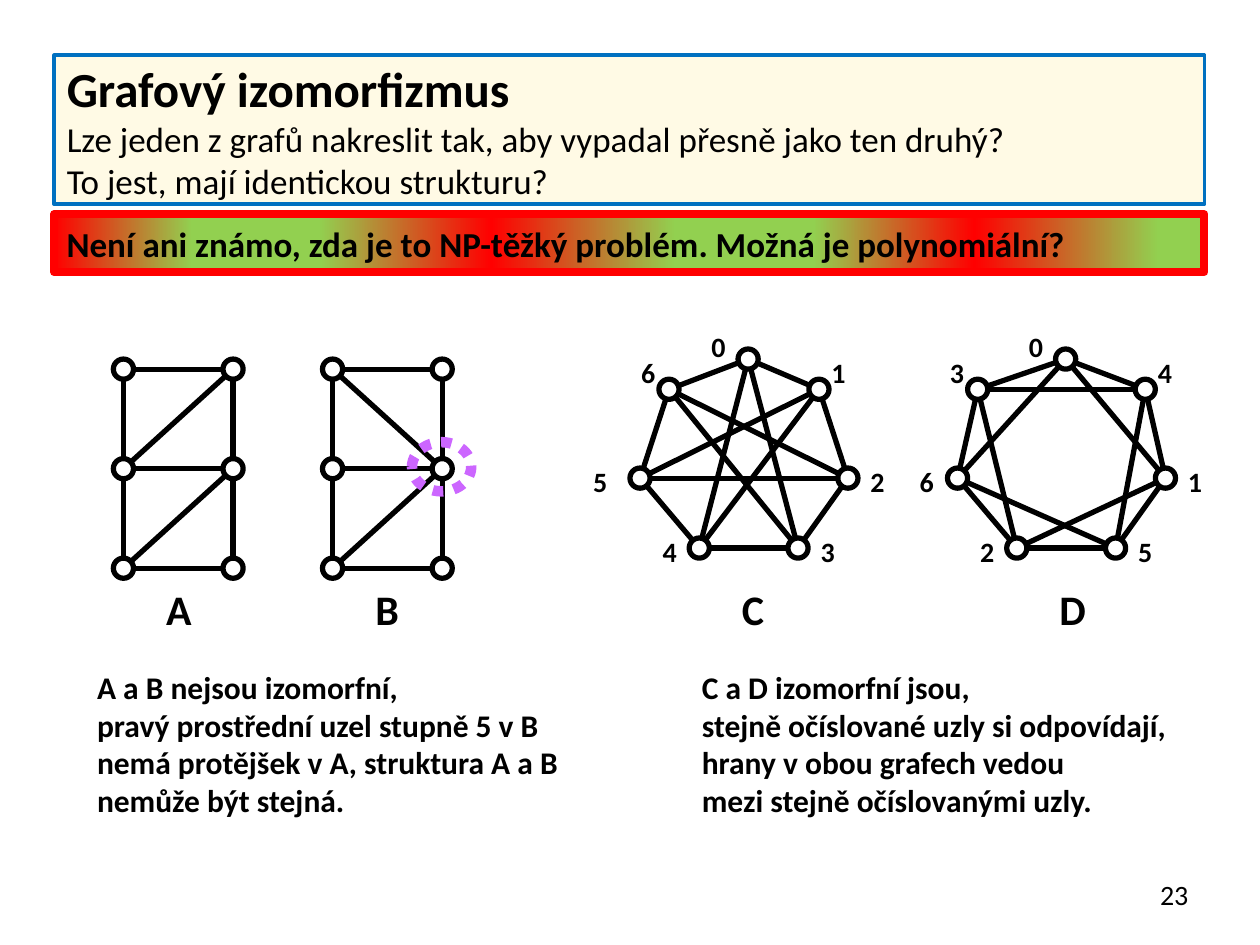
from dataclasses import dataclass

from lxml.etree import SubElement
from pptx import Presentation
from pptx.dml.color import RGBColor
from pptx.enum.dml import MSO_LINE
from pptx.enum.shapes import MSO_CONNECTOR, MSO_SHAPE
from pptx.enum.text import MSO_ANCHOR, MSO_AUTO_SIZE, PP_ALIGN
from pptx.oxml.ns import qn
from pptx.util import Inches, Pt


@dataclass(frozen=True)
class Theme:
    font: str = "Calibri"
    ink: str = "000000"
    paper: str = "FFFFFF"
    cream: str = "FFFAE5"
    blue: str = "0070C0"
    red: str = "FF0000"
    green: str = "92D050"
    violet: str = "CC66FF"
    title_size: int = 28
    caption_size: int = 24
    subtitle_size: int = 20
    note_size: int = 18
    label_size: int = 16


@dataclass(frozen=True)
class Box:
    left: float
    top: float
    width: float
    height: float

    def emu(self):
        return [Inches(v) for v in (self.left, self.top, self.width, self.height)]


THEME = Theme()
NODE_SIZE = 0.16
EDGE_WIDTH = 3


def color(code):
    return RGBColor.from_string(code)


def move(placeholder, box):
    placeholder.left, placeholder.top, placeholder.width, placeholder.height = box.emu()


def outline(shape, code, width):
    shape.line.color.rgb = color(code)
    shape.line.width = Pt(width)


def format_paragraph(paragraph, size, bold=True, align=PP_ALIGN.LEFT):
    paragraph.alignment = align
    paragraph.space_before = Pt(0)
    for run in paragraph.runs:
        run.font.name = THEME.font
        run.font.size = Pt(size)
        run.font.bold = bold
        run.font.color.rgb = color(THEME.ink)


def add_text(slide, box, text, size, wrap=True, bold=True, align=PP_ALIGN.LEFT):
    frame = slide.shapes.add_textbox(*box.emu()).text_frame
    frame.word_wrap = wrap
    frame.text = text
    format_paragraph(frame.paragraphs[0], size, bold, align)
    return frame


def add_header(slide, box):
    title = slide.shapes.title
    move(title, box)
    title.fill.solid()
    title.fill.fore_color.rgb = color(THEME.cream)
    outline(title, THEME.blue, 2.25)
    frame = title.text_frame
    frame.auto_size = MSO_AUTO_SIZE.NONE
    frame.vertical_anchor = MSO_ANCHOR.MIDDLE
    frame.text = ("Grafový izomorfizmus\n"
                  "Lze jeden z grafů nakreslit tak, aby vypadal přesně jako ten druhý?\n"
                  "To jest, mají identickou strukturu?")
    heading, *questions = frame.paragraphs
    format_paragraph(heading, THEME.title_size)
    for question in questions:
        format_paragraph(question, THEME.subtitle_size, bold=False)


def add_banner(slide, box):
    banner = slide.shapes.add_shape(MSO_SHAPE.RECTANGLE, *box.emu())
    banner.shadow.inherit = False
    banner.fill.gradient()
    banner.fill.gradient_angle = 0
    stops = banner.fill._fill._gradFill.find(qn("a:gsLst"))
    stops[:] = []
    red, green = THEME.red, THEME.green
    for percent, code in zip((0, 12, 23, 38, 54, 66, 80, 96),
                             (red, green, green, red, green, green, red, green)):
        stop = SubElement(stops, qn("a:gs"), pos=str(percent * 1000))
        SubElement(stop, qn("a:srgbClr"), val=code)
    outline(banner, red, 4.5)
    frame = banner.text_frame
    frame.vertical_anchor = MSO_ANCHOR.MIDDLE
    frame.text = "Není ani známo, zda je to NP-těžký problém. Možná je polynomiální?"
    format_paragraph(frame.paragraphs[0], THEME.subtitle_size)


def add_graph(slide, nodes, edges):
    for start, end in edges:
        ends = [Inches(v) for v in (*nodes[start], *nodes[end])]
        edge = slide.shapes.add_connector(MSO_CONNECTOR.STRAIGHT, *ends)
        outline(edge, THEME.ink, EDGE_WIDTH)
        SubElement(edge._element.spPr, qn("a:effectLst"))
    for x, y in nodes.values():
        spot = Box(x - NODE_SIZE / 2, y - NODE_SIZE / 2, NODE_SIZE, NODE_SIZE)
        node = slide.shapes.add_shape(MSO_SHAPE.OVAL, *spot.emu())
        node.shadow.inherit = False
        node.fill.solid()
        node.fill.fore_color.rgb = color(THEME.paper)
        outline(node, THEME.ink, EDGE_WIDTH)


def add_caption(slide, box, name, offset):
    spot = Box(box.left + offset, 4.58, 0.41, 0.5)
    add_text(slide, spot, name, THEME.caption_size, wrap=False)


def add_ladder(slide, box, name, diagonals):
    nodes = {(row, col): (box.left + col * box.width, box.top + row * box.height / 2)
             for row in range(3) for col in range(2)}
    rungs = [((row, 0), (row, 1)) for row in range(3)]
    rails = [((0, col), (2, col)) for col in range(2)]
    add_graph(slide, nodes, rungs + rails + diagonals)
    add_caption(slide, box, name, 0.24)


def add_heptagon(slide, box, name, labels, chord_step, shoulder, west_gap):
    shares = [(0.52, 0), (1 - shoulder / box.width, 0.16), (1, 0.63), (0.76, 1),
              (0.285, 1), (0, 0.63), (shoulder / box.width, 0.16)]
    nodes = {i: (box.left + x * box.width, box.top + y * box.height)
             for i, (x, y) in enumerate(shares)}
    edges = [(i, (i + step) % 7) for step in (1, chord_step) for i in range(7)]
    add_graph(slide, nodes, edges)
    add_caption(slide, box, name, 0.71)
    offsets = [(-0.39, -0.28), (0, -0.32), (0.08, -0.16), (0.08, -0.16),
               (-0.39, -0.16), (-west_gap, -0.16), (-0.32, -0.32)]
    for label, (x, y), (dx, dy) in zip(labels, nodes.values(), offsets):
        add_text(slide, Box(x + dx, y + dy, 0.31, 0.37), label, THEME.label_size)


def add_highlight(slide, box):
    ring = slide.shapes.add_shape(MSO_SHAPE.OVAL, *box.emu())
    ring.shadow.inherit = False
    ring.fill.background()
    outline(ring, THEME.violet, 6)
    ring.line.dash_style = MSO_LINE.ROUND_DOT


def add_explanation(placeholder, box, text):
    move(placeholder, box)
    frame = placeholder.text_frame
    frame.auto_size = MSO_AUTO_SIZE.NONE
    frame.word_wrap = False
    frame.text = text
    for paragraph in frame.paragraphs:
        properties = paragraph._p.get_or_add_pPr()
        properties.set("marL", "0")
        properties.set("indent", "0")
        SubElement(properties, qn("a:buNone"))
        format_paragraph(paragraph, THEME.note_size)


def add_page_number(slide, box):
    frame = add_text(slide, box, "23", THEME.label_size, bold=False, align=PP_ALIGN.RIGHT)
    frame.vertical_anchor = MSO_ANCHOR.MIDDLE


def main():
    deck = Presentation()
    deck.slide_width, deck.slide_height = Inches(10), Inches(7.5)
    slide = deck.slides.add_slide(deck.slide_layouts[3])
    add_header(slide, Box(0.43, 0.44, 9.13, 1.18))
    add_banner(slide, Box(0.43, 1.7, 9.13, 0.46))
    lower_diagonal = ((2, 0), (1, 1))
    add_ladder(slide, Box(0.98, 2.93, 0.87, 1.58), "A", [((1, 0), (0, 1)), lower_diagonal])
    add_ladder(slide, Box(2.64, 2.93, 0.87, 1.58), "B", [((0, 0), (1, 1)), lower_diagonal])
    add_highlight(slide, Box(3.27, 3.51, 0.47, 0.39))
    add_heptagon(slide, Box(5.08, 2.85, 1.65, 1.5), "C", "0123456", 3, 0.23, 0.47)
    add_heptagon(slide, Box(7.6, 2.85, 1.65, 1.5), "D", "0415263", 2, 0.16, 0.4)
    add_explanation(slide.placeholders[1], Box(0.67, 5.25, 3.95, 1.31),
                    "A a B nejsou izomorfní,\npravý prostřední uzel stupně 5 v B\n"
                    "nemá protějšek v A, struktura A a B\nnemůže být stejná.")
    add_explanation(slide.placeholders[2], Box(5.47, 5.25, 3.97, 1.31),
                    "C a D izomorfní jsou,\nstejně očíslované uzly si odpovídají,\n"
                    "hrany v obou grafech vedou\nmezi stejně očíslovanými uzly.")
    add_page_number(slide, Box(7.2, 6.9, 2.33, 0.4))
    deck.save("out.pptx")


if __name__ == "__main__":
    main()
